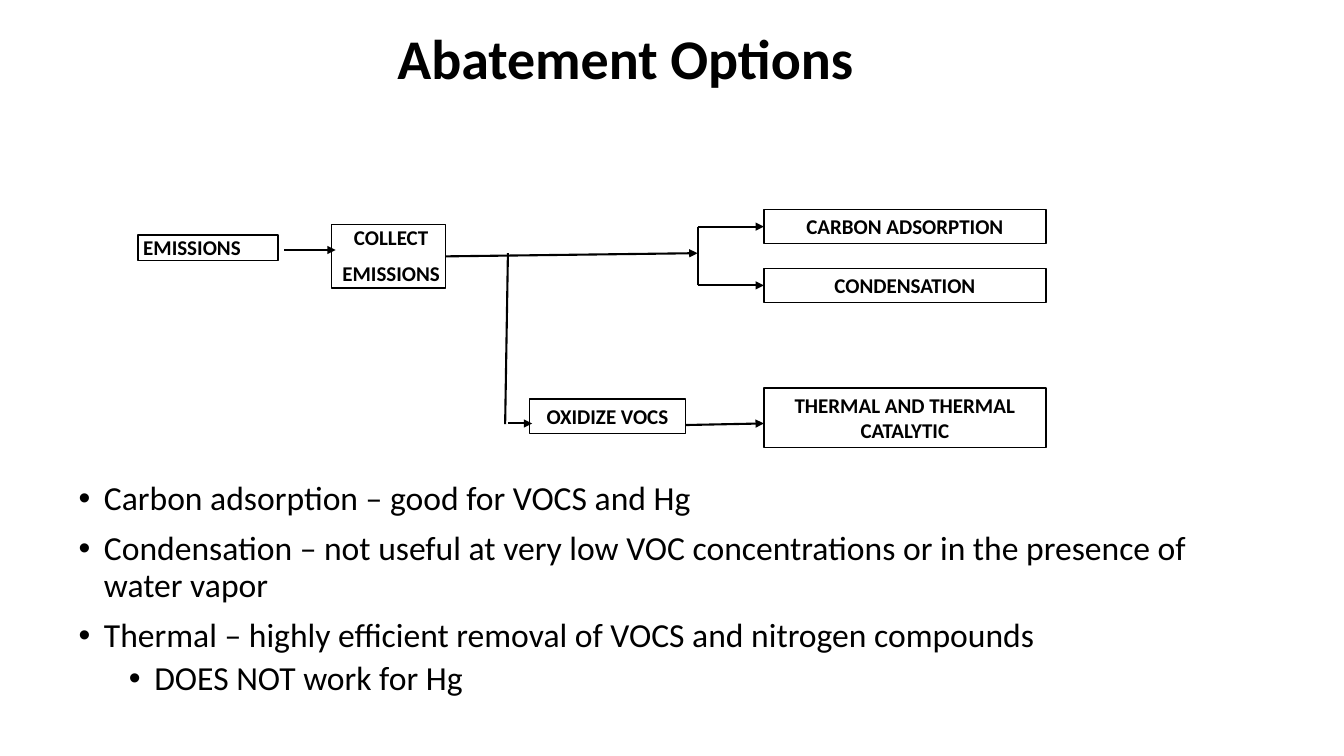
from lxml import etree
from pptx import Presentation
from pptx import util as u
from pptx.dml.color import RGBColor
from pptx.enum import shapes, text
from pptx.oxml.ns import qn

COLOURS = {"ink": "000000", "paper": "FFFFFF"}
FONT = "Calibri"

STAGES = {
    "emissions": (0, 0.64, 3.53, 0.64, ["EMISSIONS"]),
    "collect": (4.88, 0.38, 2.87, 1.6, ["COLLECT", "EMISSIONS"]),
    "oxidize": (9.86, 4.78, 3.94, 0.86, ["OXIDIZE VOCS"]),
    "carbon": (15.77, 0, 7.11, 0.86, ["CARBON ADSORPTION"]),
    "condensation": (15.77, 1.48, 7.11, 0.86, ["CONDENSATION"]),
    "thermal": (15.77, 4.5, 7.11, 1.5, ["THERMAL AND THERMAL CATALYTIC"]),
}
TIGHT_STAGES = ("emissions", "collect")

FLOWS = [
    (3.68, 1.02, 4.98, 1.02, True, None, None),
    (7.75, 1.18, 14.1, 1.1, True, "collect", None),
    (14.1, 1.91, 14.1, 0.43, False, None, None),
    (14.1, 0.43, 15.77, 0.43, True, None, "carbon"),
    (14.1, 1.91, 15.77, 1.91, True, None, "condensation"),
    (9.25, 5.41, 9.32, 1.1, False, None, None),
    (9.32, 5.39, 9.93, 5.39, True, None, None),
    (13.8, 5.43, 15.77, 5.39, True, None, "thermal_free"),
]

POINTS = [
    (0, "Carbon adsorption – good for VOCS and Hg"),
    (0, "Condensation – not useful at very low VOC concentrations or in the presence of water vapor"),
    (0, "Thermal – highly efficient removal of VOCS and nitrogen compounds"),
    (1, "DOES NOT work for Hg"),
]


def colour(name):
    return RGBColor.from_string(COLOURS[name])


def style(para, size, bold=False):
    for span in para.runs:
        span.font.name = FONT
        span.font.size = u.Pt(size)
        span.font.bold = bold
        span.font.color.rgb = colour("ink")


def add_title(page, left, top, width, height):
    box = page.shapes.add_textbox(u.Cm(left), u.Cm(top), u.Cm(width), u.Cm(height))
    box.text_frame.word_wrap = True
    para = box.text_frame.paragraphs[0]
    para.text = "Abatement Options"
    para.alignment = text.PP_ALIGN.CENTER
    style(para, 40, True)


def add_stage(page, left, top, width, height, lines, tight):
    box = page.shapes.add_shape(shapes.MSO_SHAPE.RECTANGLE,
                                u.Cm(left), u.Cm(top), u.Cm(width), u.Cm(height))
    box.shadow.inherit = False
    box.fill.solid()
    box.fill.fore_color.rgb = colour("paper")
    box.line.color.rgb = colour("ink")
    box.line.width = u.Pt(1)
    frame = box.text_frame
    frame.word_wrap = True
    frame.vertical_anchor = text.MSO_ANCHOR.TOP
    frame.margin_left = u.Cm(0.13 if tight else 0.23)
    frame.margin_right = u.Cm(0 if tight else 0.23)
    frame.margin_top = frame.margin_bottom = u.Cm(0 if tight else 0.11)
    frame.text = "\n".join(lines)
    for index, para in enumerate(frame.paragraphs):
        para.alignment = text.PP_ALIGN.CENTER
        para.space_before = u.Pt(7.5 if index else 0)
        style(para, 15, True)
    return box


def add_flow(page, x1, y1, x2, y2, arrow):
    line = page.shapes.add_connector(shapes.MSO_CONNECTOR.STRAIGHT,
                                     u.Cm(x1), u.Cm(y1), u.Cm(x2), u.Cm(y2))
    line.line.color.rgb = colour("ink")
    line.line.width = u.Pt(1.5)
    if arrow:
        etree.SubElement(line.line._get_or_add_ln(), qn("a:tailEnd"), type="triangle")
    etree.SubElement(line._element.spPr, qn("a:effectLst"))
    return line


def add_diagram(page, left, top):
    boxes = {}
    for name, (x, y, width, height, lines) in STAGES.items():
        boxes[name] = add_stage(page, left + x, top + y, width, height, lines,
                                name in TIGHT_STAGES)
    boxes["emissions"].text_frame.paragraphs[0].alignment = text.PP_ALIGN.LEFT
    for x1, y1, x2, y2, arrow, source, target in FLOWS:
        line = add_flow(page, left + x1, top + y1, left + x2, top + y2, arrow)
        if source in boxes:
            line.begin_connect(boxes[source], 3)
        if target in boxes:
            line.end_connect(boxes[target], 1)


def add_points(page, left, top, width, height):
    box = page.shapes.add_textbox(u.Cm(left), u.Cm(top), u.Cm(width), u.Cm(height))
    frame = box.text_frame
    frame.word_wrap = True
    frame.text = "\n".join(words for level, words in POINTS)
    for para, (level, words) in zip(frame.paragraphs, POINTS):
        para.level = level
        para.line_spacing = 0.9
        para.space_before = u.Pt(5 if level else 10)
        style(para, 24)
        props = para._p.get_or_add_pPr()
        props.set("marL", str(u.Cm(0.64 + 1.27 * level)))
        props.set("indent", str(u.Cm(-0.64)))
        etree.SubElement(props, qn("a:buFont"), typeface="Arial")
        etree.SubElement(props, qn("a:buChar"), char="•")


def main():
    deck = Presentation()
    deck.slide_width = u.Cm(33.87)
    deck.slide_height = u.Cm(19.05)
    page = deck.slides.add_slide(deck.slide_layouts[6])
    add_title(page, 8.33, 0.48, 14.86, 1.96)
    add_diagram(page, 3.48, 5.28)
    add_points(page, 1.73, 12.01, 29.21, 5.84)
    deck.save("out.pptx")


if __name__ == "__main__":
    main()
